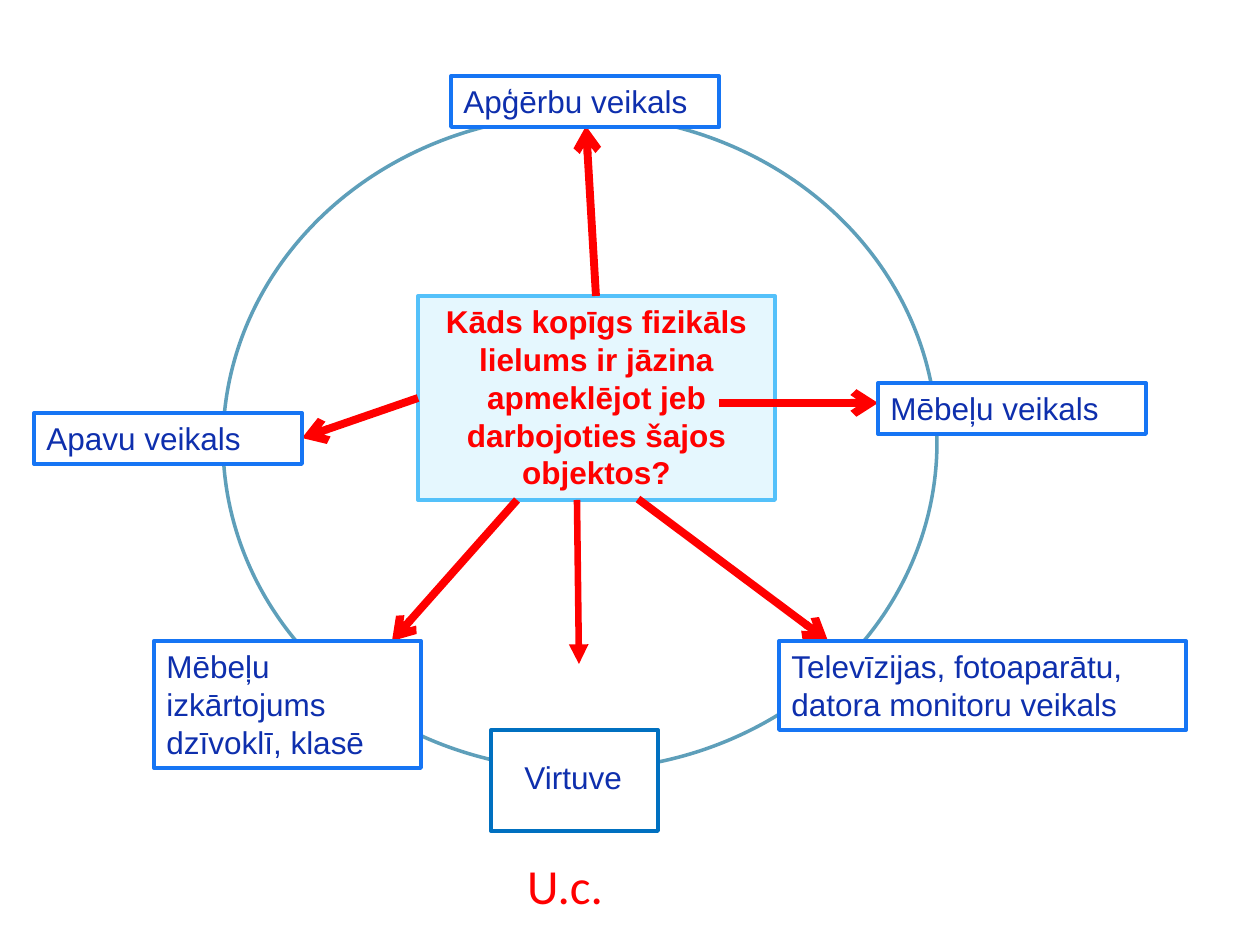
"""Build a slide that links one question to six places around a ring."""
from typing import NamedTuple, Optional

from lxml.etree import SubElement
from pptx import Presentation
from pptx.dml.color import RGBColor as Color
from pptx.enum.shapes import MSO_CONNECTOR as Link, MSO_SHAPE as Form
from pptx.enum.text import MSO_ANCHOR as Anchor, MSO_AUTO_SIZE as Fit, PP_ALIGN as Align
from pptx.oxml.ns import qn
from pptx.util import Emu, Pt

WHITE = Color(0xFF, 0xFF, 0xFF)
RED = Color(0xFF, 0x00, 0x00)
NAVY = Color(0x0E, 0x2F, 0xAD)
BLUE = Color(0x16, 0x75, 0xF4)
DEEP = Color(0x00, 0x70, 0xC0)
SKY = Color(0x54, 0xC1, 0xFA)
PALE = Color(0xE5, 0xF7, 0xFE)
TEAL = Color(0x5E, 0x9F, 0xBA)
SCALE = 914400 / 126


class Area(NamedTuple):
    left: int
    top: int
    width: int
    height: int


class Place(NamedTuple):
    text: str
    area: Area


class Arrow(NamedTuple):
    start: tuple[int, int]
    end: tuple[int, int]
    width: float = 4.5
    head: str = "arrow"


RING = Area(223, 115, 714, 655)
CORE = Area(418, 296, 357, 204)
KITCHEN = Area(491, 730, 167, 101)
QUESTION = "Kāds kopīgs fizikāls lielums ir jāzina apmeklējot jeb darbojoties šajos objektos?"

ARROWS = [
    Arrow((596, 296), (586, 126)),
    Arrow((517, 500), (392, 641)),
    Arrow((719, 403), (878, 403)),
    Arrow((638, 499), (828, 641)),
    Arrow((418, 398), (302, 438)),
]
DOWN = Arrow((577, 500), (579, 664), 3.75, "triangle")

PLACES = [
    Place("Apavu veikals", Area(34, 413, 268, 51)),
    Place("Mēbeļu veikals", Area(878, 383, 268, 51)),
    Place("Apģērbu veikals", Area(451, 76, 268, 51)),
    Place("Mēbeļu izkārtojums dzīvoklī, klasē", Area(154, 641, 267, 127)),
    Place("Televīzijas, fotoaparātu, datora monitoru veikals", Area(779, 641, 407, 89)),
]


def px(value: int) -> Emu:
    """Turn pixels into EMU."""
    return Emu(round(value * SCALE))


def draw(slide, area: Area, line: Color, fill: Color = WHITE,
         form: Form = Form.RECTANGLE, width: float = 2.25):
    """Add a filled and outlined shape."""
    shape = slide.shapes.add_shape(form, *map(px, area))
    shape.shadow.inherit = False
    shape.fill.solid()
    shape.fill.fore_color.rgb = fill
    shape.line.color.rgb = line
    shape.line.width = Pt(width)
    return shape


def write(shape, text: str, *, size: int = 18, color: Color = NAVY, face: str = "Arial",
          bold: Optional[bool] = None, align: Align = Align.LEFT) -> None:
    """Put formatted text in a shape."""
    frame = shape.text_frame
    frame.word_wrap = True
    frame.auto_size = Fit.SHAPE_TO_FIT_TEXT
    frame.vertical_anchor = Anchor.TOP
    para = frame.paragraphs[0]
    para.alignment = align
    run = para.add_run()
    run.text = text
    font = run.font
    font.size = Pt(size)
    font.name = face
    font.bold = bold
    font.color.rgb = color


def point(slide, arrow: Arrow) -> None:
    """Add a red arrow."""
    link = slide.shapes.add_connector(Link.STRAIGHT, *map(px, arrow.start + arrow.end))
    link.line.color.rgb = RED
    link.line.width = Pt(arrow.width)
    SubElement(link.line._get_or_add_ln(), qn("a:tailEnd"), type=arrow.head)
    SubElement(link._element.spPr, qn("a:effectLst"))


def label(slide, area: Area, text: str, **style) -> None:
    """Add a plain text box."""
    write(slide.shapes.add_textbox(*map(px, area)), text, **style)


def main() -> None:
    """Build and save the slide."""
    deck = Presentation()
    deck.slide_width, deck.slide_height = px(1260), px(945)
    slide = deck.slides.add_slide(deck.slide_layouts[6])

    draw(slide, RING, TEAL, form=Form.OVAL, width=2)
    core = draw(slide, CORE, SKY, PALE)
    write(core, QUESTION, color=RED, bold=True, align=Align.CENTER)
    for arrow in ARROWS:
        point(slide, arrow)
    for place in PLACES:
        write(draw(slide, place.area, BLUE), place.text)

    label(slide, Area(461, 849, 208, 72), "U.c.", size=28, color=RED,
          face="Calibri", align=Align.CENTER)
    draw(slide, KITCHEN, DEEP)
    point(slide, DOWN)
    label(slide, Area(512, 752, 130, 51), "Virtuve")
    deck.save("out.pptx")


if __name__ == "__main__":
    main()
